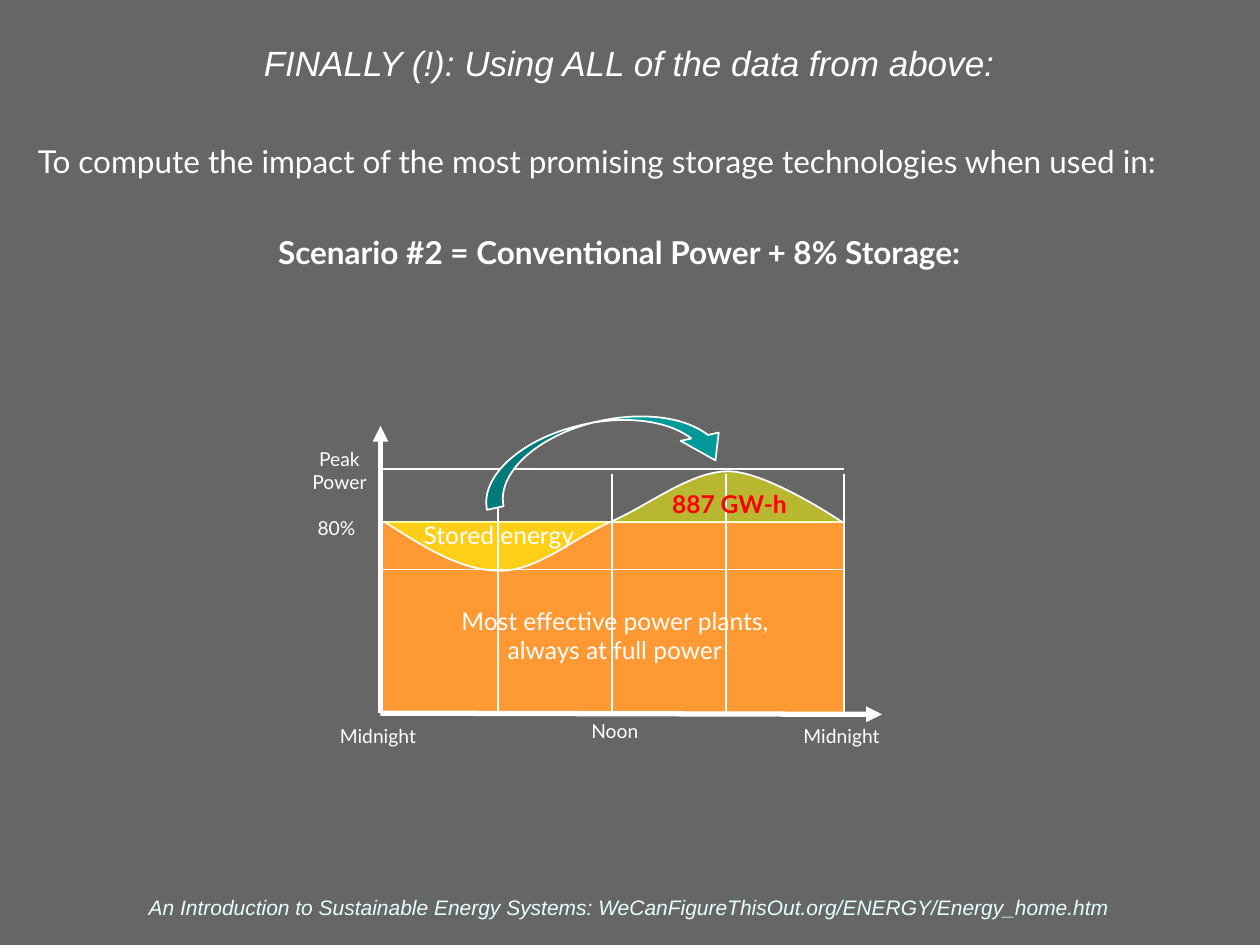
from lxml import etree
from pptx import Presentation
from pptx.dml.color import RGBColor
from pptx.enum.shapes import MSO_CONNECTOR, MSO_SHAPE
from pptx.enum.text import MSO_ANCHOR, MSO_AUTO_SIZE, PP_ALIGN
from pptx.oxml.ns import qn
from pptx.util import Pt

PX = 9144
LEFT, CENTER = PP_ALIGN.LEFT, PP_ALIGN.CENTER
TOP, MIDDLE, BOTTOM = MSO_ANCHOR.TOP, MSO_ANCHOR.MIDDLE, MSO_ANCHOR.BOTTOM
STRAIGHT = MSO_CONNECTOR.STRAIGHT
WHITE, ORANGE, YELLOW, TEAL, RED = "FFFFFF", "FF9933", "FFFF00", "009999", "FF0000"

TITLE = "FINALLY (!): Using ALL of the data from above:"
INTRO = "To compute the impact of the most promising storage technologies when used in:"
SCENARIO = "Scenario #2 = Conventional Power + 8% Storage:"
FOOTER = "An Introduction to Sustainable Energy Systems: WeCanFigureThisOut.org/ENERGY/Energy_home.htm"

PLOT_LEFT, PLOT_RIGHT, PLOT_TOP, PLOT_BOTTOM = 302, 670, 414, 566
AXES = [(700, 567), (302, 338)]
HOUR_LINES = [395, 576, 670]
HOUR_LINE_TOP = 376
POWER_LINES = [452, 372]
DEMAND_START = (305, 414)
DEMAND_CURVES = [
    [(336, 434), (366, 453), (397, 453)],
    [(427, 453), (455, 427), (485, 414)],
    [(515, 401), (548, 374), (578, 374)],
    [(609, 374), (668, 414), (668, 414)],
]
CURVE_STEPS = 16

LABELS = [
    (["Peak Power"], (231, 350, 77, 46), 11, WHITE, False, CENTER),
    (["80%"], (247, 405, 55, 30), 11, WHITE, False, LEFT),
    (["Midnight"], (250, 570, 100, 30), 11, WHITE, False, CENTER),
    (["Noon"], (438, 566, 100, 28), 11, WHITE, False, CENTER),
    (["Midnight"], (618, 570, 100, 30), 11, WHITE, False, CENTER),
    (["Most effective power plants,", "always at full power"],
     (342, 476, 292, 57), 14, WHITE, False, CENTER),
    (["Stored energy"], (292, 408, 208, 34), 14, WHITE, False, CENTER),
    (["887 GW-h"], (500, 383, 158, 34), 14, RED, True, CENTER),
]


def rgb(code):
    return RGBColor.from_string(code)


def place(shape, box):
    shape.left, shape.top, shape.width, shape.height = (v * PX for v in box)


def write(shape, lines, size, color, font="Lato", bold=False, italic=False,
          align=CENTER, anchor=TOP):
    frame = shape.text_frame
    frame.word_wrap = True
    frame.auto_size = MSO_AUTO_SIZE.NONE
    frame.vertical_anchor = anchor
    frame.margin_left = frame.margin_right = frame.margin_top = frame.margin_bottom = 5 * PX
    frame.text = "\n".join(lines)
    for paragraph in frame.paragraphs:
        paragraph.alignment = align
        paragraph.space_before = Pt(0)
        paragraph.font.name, paragraph.font.size = font, Pt(size)
        paragraph.font.bold, paragraph.font.italic = bold, italic
        paragraph.font.color.rgb = rgb(color)


def label(slide, lines, box, *args, **kwargs):
    text = slide.shapes.add_textbox(*(v * PX for v in box))
    write(text, lines, *args, **kwargs)


def outline(shape, fill):
    shape.shadow.inherit = False
    shape.fill.solid()
    shape.fill.fore_color.rgb = rgb(fill)
    shape.line.color.rgb = rgb(WHITE)
    shape.line.width = Pt(1)


def add_line(slide, start, end, width=1, arrow=False):
    line = slide.shapes.add_connector(STRAIGHT, *(v * PX for v in start + end))
    line.line.color.rgb = rgb(WHITE)
    line.line.width = Pt(width)
    if arrow:
        etree.SubElement(line.line._get_or_add_ln(), qn("a:tailEnd"), type="triangle")
    etree.SubElement(line._element.spPr, qn("a:effectLst"))
    return line


def curve_points(start, curves):
    points = []
    for b, c, d in curves:
        for step in range(1, CURVE_STEPS + 1):
            t = step / CURVE_STEPS
            weights = (1 - t) ** 3, 3 * t * (1 - t) ** 2, 3 * t * t * (1 - t), t ** 3
            points.append(tuple(
                sum(w * p[axis] for w, p in zip(weights, (start, b, c, d))) * PX
                for axis in (0, 1)))
        start = d
    return points


def add_headings(slide):
    title, body = slide.placeholders
    place(title, (33, 25, 933, 50))
    write(title, [TITLE], 20, WHITE, font="Arial", italic=True, anchor=MIDDLE)
    place(body, (25, 108, 933, 583))
    write(body, [INTRO, SCENARIO], 18, WHITE, align=LEFT)
    for paragraph in body.text_frame.paragraphs:
        properties = paragraph._p.get_or_add_pPr()
        properties.set("marL", "0")
        properties.set("indent", "0")
        bullet = etree.Element(qn("a:buNone"))
        properties.find(qn("a:defRPr")).addprevious(bullet)
    scenario = body.text_frame.paragraphs[1]
    scenario.alignment = CENTER
    scenario.space_before = Pt(30)
    scenario.font.bold = True


def add_diagram(slide):
    plants = slide.shapes.add_shape(
        MSO_SHAPE.RECTANGLE, PLOT_LEFT * PX, PLOT_TOP * PX,
        (PLOT_RIGHT - PLOT_LEFT) * PX, (PLOT_BOTTOM - PLOT_TOP) * PX)
    outline(plants, ORANGE)
    for end in AXES:
        add_line(slide, (PLOT_LEFT, PLOT_BOTTOM), end, 3, True)

    builder = slide.shapes.build_freeform(*(v * PX for v in DEMAND_START))
    builder.add_line_segments(curve_points(DEMAND_START, DEMAND_CURVES), close=False)
    demand = builder.convert_to_shape()
    outline(demand, YELLOW)
    fill_color = demand._element.spPr.find(qn("a:solidFill"))[0]
    etree.SubElement(fill_color, qn("a:alpha"), val="53000")

    for x in HOUR_LINES:
        add_line(slide, (x, PLOT_BOTTOM), (x, HOUR_LINE_TOP))
    noon = (PLOT_LEFT + PLOT_RIGHT) // 2
    add_line(slide, (noon, PLOT_BOTTOM), (noon, HOUR_LINE_TOP)).begin_connect(plants, 2)
    for y in POWER_LINES:
        add_line(slide, (PLOT_LEFT, y), (PLOT_RIGHT, y))

    transfer = slide.shapes.add_shape(
        MSO_SHAPE.CURVED_DOWN_ARROW, *(v * PX for v in (379, 334, 201, 50)))
    outline(transfer, TEAL)
    transfer.rotation = 347.8
    for index, value in enumerate((0.27, 0.62, 0.42)):
        transfer.adjustments[index] = value

    for lines, box, size, color, bold, align in LABELS:
        label(slide, lines, box, size, color, bold=bold, align=align)


def main():
    """Build the energy storage scenario slide."""
    deck = Presentation()
    deck.slide_width, deck.slide_height = 1000 * PX, 750 * PX
    slide = deck.slides.add_slide(deck.slide_layouts[1])
    slide.background.fill.solid()
    slide.background.fill.fore_color.rgb = rgb("666666")
    add_headings(slide)
    add_diagram(slide)
    label(slide, [FOOTER], (33, 706, 933, 29), 12, "E5FFFF", font="Arial",
          italic=True, anchor=BOTTOM)
    deck.save("out.pptx")


if __name__ == "__main__":
    main()
